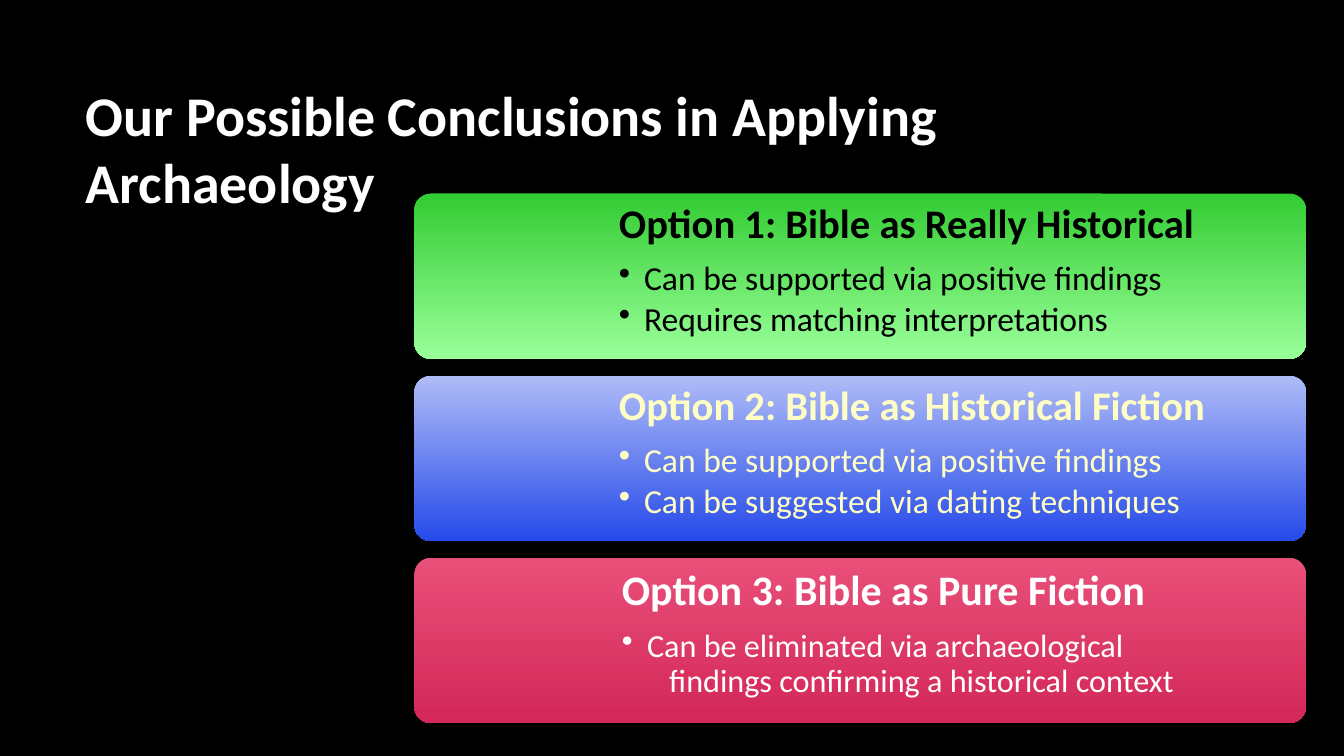
from lxml import etree
from pptx import Presentation
from pptx.dml.color import RGBColor
from pptx.enum.shapes import MSO_SHAPE
from pptx.enum.text import MSO_ANCHOR, PP_ALIGN
from pptx.oxml.ns import qn
from pptx.util import Inches, Pt

ROUNDED = MSO_SHAPE.ROUNDED_RECTANGLE
TOP, MIDDLE = MSO_ANCHOR.TOP, MSO_ANCHOR.MIDDLE
LEFT = PP_ALIGN.LEFT
TITLE_ONLY = 5

COLORS = {
    "background": "000000", "white": "FFFFFF", "black": "000000", "cream": "FFFFC5",
    "green": "33CC33", "light green": "99FF99",
    "light blue": "AFBCF7", "blue": "264AEA",
    "rose": "E84F79", "crimson": "D32859",
}

# Cards: left, top, width, height and row pitch in percent of the slide
CARD_LEFT, CARD_TOP, CARD_WIDTH, CARD_HEIGHT = 30.83, 25.6, 66.35, 21.87
CARD_PITCH = 24.09
BULLET_INDENT, CONTINUATION_INDENT = 0.25, 0.47

# A nested tuple holds the lines of one bullet
OPTIONS = [
    dict(heading="Option 1: Bible as Really Historical",
         points=[("Can be supported via positive findings",),
                 ("Requires matching interpretations",)],
         gradient=("green", "light green"), ink="black",
         sizes=(29, 24), insets=(1.98, 0.05)),
    dict(heading="Option 2: Bible as Historical Fiction",
         points=[("Can be supported via positive findings",),
                 ("Can be suggested via dating techniques",)],
         gradient=("light blue", "blue"), ink="cream",
         sizes=(29, 24), insets=(1.98, 0.05)),
    dict(heading="Option 3: Bible as Pure Fiction",
         points=[("Can be eliminated via archaeological",
                  "findings confirming a historical context")],
         gradient=("rose", "crimson"), ink="white",
         sizes=(30, 23), insets=(2.01, 0.07)),
]


class Deck:
    """Holds the style and the current slide."""

    font = "Calibri"

    def __init__(self):
        self.prs = Presentation()
        self.prs.slide_width, self.prs.slide_height = Inches(13.33), Inches(7.5)
        self.slide = self.prs.slides.add_slide(self.prs.slide_layouts[TITLE_ONLY])
        backdrop = self.slide.background.fill
        backdrop.solid()
        backdrop.fore_color.rgb = self.color("background")

    def color(self, name):
        return RGBColor.from_string(COLORS[name])

    def box(self, left, top, width, height):
        """Turn percentages of the slide into lengths."""
        across, down = self.prs.slide_width / 100, self.prs.slide_height / 100
        return (int(left * across), int(top * down),
                int(width * across), int(height * down))

    def set_text(self, paragraph, text, size, ink, bold=False):
        paragraph.text = text
        paragraph.alignment = LEFT
        for run in paragraph.runs:
            run.font.name, run.font.size, run.font.bold = self.font, Pt(size), bold
            run.font.color.rgb = self.color(ink)

    def title(self, text, place):
        heading = self.slide.shapes.title
        heading.left, heading.top, heading.width, heading.height = self.box(*place)
        frame = heading.text_frame
        frame.vertical_anchor = MIDDLE
        self.set_text(frame.paragraphs[0], text, 40, "white", bold=True)

    def indent(self, paragraph, margin, bullet=False):
        paragraph.level = 1
        props = paragraph._p.get_or_add_pPr()
        props.set("marL", str(Inches(margin)))
        props.set("indent", str(-Inches(margin) if bullet else 0))
        if bullet:
            etree.SubElement(props, qn("a:buChar")).set("char", "•")
        else:
            etree.SubElement(props, qn("a:buNone"))

    def space(self, paragraph, after):
        paragraph.line_spacing = 0.9
        paragraph.space_before = Pt(0)
        paragraph.space_after = Pt(round(after, 1))

    def card(self, place, heading, points, gradient, ink, sizes, insets):
        card = self.slide.shapes.add_shape(ROUNDED, *self.box(*place))
        card.adjustments[0] = 0.1
        card.shadow.inherit = False
        card.line.fill.background()
        card.fill.gradient()
        card.fill.gradient_angle = 270
        for stop, name in zip(card.fill.gradient_stops, gradient):
            stop.color.rgb = self.color(name)

        frame = card.text_frame
        frame.word_wrap = True
        frame.vertical_anchor = TOP
        frame.margin_left = Inches(insets[0])
        frame.margin_top = frame.margin_right = frame.margin_bottom = Inches(insets[1])

        heading_size, point_size = sizes
        first = frame.paragraphs[0]
        self.space(first, heading_size * 0.35)
        self.set_text(first, heading, heading_size, ink, bold=True)
        for lines in points:
            for number, line in enumerate(lines):
                paragraph = frame.add_paragraph()
                starts, ends = number == 0, number == len(lines) - 1
                self.indent(paragraph, BULLET_INDENT if starts else CONTINUATION_INDENT,
                            bullet=starts)
                self.space(paragraph, point_size * 0.15 if ends else 0)
                self.set_text(paragraph, line, point_size, ink)


def main():
    deck = Deck()
    deck.title("Our Possible Conclusions in Applying Archaeology", (5.63, 8.93, 85.07, 21.2))
    # One card per option, stacked at an equal pitch
    for row, option in enumerate(OPTIONS):
        top = CARD_TOP + row * CARD_PITCH
        deck.card((CARD_LEFT, top, CARD_WIDTH, CARD_HEIGHT), **option)
    deck.prs.save("out.pptx")


if __name__ == "__main__":
    main()
